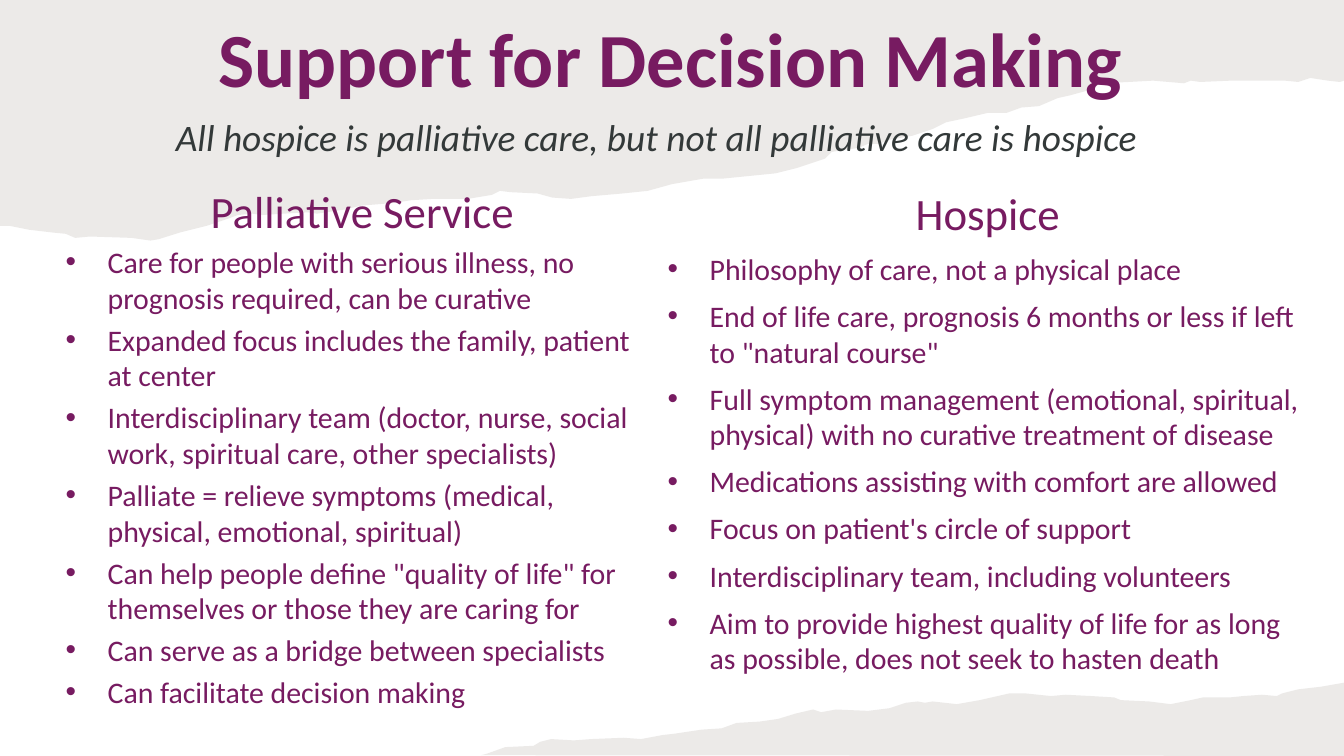
from dataclasses import dataclass

import pptx
import pptx.dml.color
import pptx.enum.text
import pptx.oxml
import pptx.oxml.ns
import pptx.util
from pptx.util import Inches


@dataclass(frozen=True)
class Theme:
    font: str = "Calibri"
    plum: str = "771B61"
    slate: str = "333939"
    paper: str = "82766A"
    paper_alpha: int = 15
    title: int = 41
    heading: int = 24
    subtitle: int = 20
    body: int = 16
    indent: float = 22.5


@dataclass(frozen=True)
class Box:
    left: float
    top: float
    width: float
    height: float


@dataclass(frozen=True)
class Column:
    box: Box
    heading: str
    bullets: tuple[str, ...]
    before: float = 0
    after: float = 0


THEME = Theme()
WIDTH = 10
HEIGHT = WIDTH * 9 / 16

TOP_TEAR = [
    (10, 0.6), (9.97, 0.61), (9.88, 0.6), (9.75, 0.58), (9.66, 0.61), (9.56, 0.6),
    (9.32, 0.6), (9.16, 0.6), (8.93, 0.61), (8.86, 0.6), (8.81, 0.62), (8.58, 0.6),
    (8.4, 0.61), (8.2, 0.62), (8.07, 0.68), (7.96, 0.71), (7.87, 0.73), (7.73, 0.79),
    (7.6, 0.8), (7.49, 0.84), (7.35, 0.84), (7.18, 0.88), (7.04, 0.91), (6.94, 0.96),
    (6.79, 1.01), (6.62, 1.04), (6.54, 1.07), (6.46, 1.07), (6.39, 1.1), (6.19, 1.13),
    (6.14, 1.18), (5.93, 1.25), (5.77, 1.29), (5.57, 1.31), (5.37, 1.33), (5.23, 1.33),
    (5, 1.37), (4.82, 1.42), (4.63, 1.44), (4.4, 1.46), (4.25, 1.48), (4.11, 1.47),
    (4, 1.44), (3.8, 1.43), (3.72, 1.42), (3.66, 1.45), (3.48, 1.48), (3.22, 1.48),
    (3.06, 1.49), (2.93, 1.51), (2.69, 1.53), (2.56, 1.56), (2.36, 1.59), (2.29, 1.58),
    (2.11, 1.59), (1.95, 1.6), (1.88, 1.59), (1.77, 1.6), (1.69, 1.63), (1.54, 1.68),
    (1.34, 1.73), (1.18, 1.78), (1.12, 1.79), (0.98, 1.77), (0.67, 1.76), (0.56, 1.77),
    (0.49, 1.74), (0.39, 1.73), (0.22, 1.71), (0.07, 1.68), (0, 1.68),
]
BOTTOM_TEAR = [
    (3.58, 5.62), (3.62, 5.61), (3.76, 5.56), (3.97, 5.55), (4.02, 5.52), (4.1, 5.5),
    (4.27, 5.51), (4.4, 5.5), (4.64, 5.49), (4.77, 5.5), (4.93, 5.47), (5.02, 5.46),
    (5.22, 5.43), (5.37, 5.42), (5.48, 5.38), (5.65, 5.37), (5.79, 5.35), (5.92, 5.31),
    (6.05, 5.28), (6.11, 5.3), (6.22, 5.28), (6.46, 5.29), (6.62, 5.27), (6.74, 5.23),
    (6.83, 5.22), (6.88, 5.23), (6.94, 5.22), (7.12, 5.24), (7.29, 5.21), (7.51, 5.16),
    (7.63, 5.16), (7.82, 5.18), (7.93, 5.17), (8.12, 5.18), (8.29, 5.19), (8.34, 5.21),
    (8.55, 5.22), (8.71, 5.24), (8.86, 5.21), (8.95, 5.19), (9.15, 5.19), (9.25, 5.18),
    (9.39, 5.17), (9.5, 5.18), (9.54, 5.16), (9.66, 5.13), (9.83, 5.11), (10, 5.08),
]

COLUMNS = (
    Column(
        Box(0.39, 1.32, 4.61, 3.84),
        "Palliative Service",
        (
            "Care for people with serious illness, no prognosis required, can be curative",
            "Expanded focus includes the family, patient at center",
            "Interdisciplinary team (doctor, nurse, social work, spiritual care, other specialists)",
            "Palliate = relieve symptoms (medical, physical, emotional, spiritual)",
            'Can help people define "quality of life" for themselves or those they are caring for',
            "Can serve as a bridge between specialists",
            "Can facilitate decision making",
        ),
        before=3.2,
    ),
    Column(
        Box(4.87, 1.33, 4.96, 3.79),
        "Hospice",
        (
            "Philosophy of care, not a physical place",
            'End of life care, prognosis 6 months or less if left to "natural course"',
            "Full symptom management (emotional, spiritual, physical) with no curative treatment of disease",
            "Medications assisting with comfort are allowed",
            "Focus on patient's circle of support",
            "Interdisciplinary team, including volunteers",
            "Aim to provide highest quality of life for as long as possible, does not seek to hasten death",
        ),
        after=6,
    ),
)


def add_torn_band(s, outline: list[tuple[float, float]]) -> None:
    points = [(Inches(x), Inches(y)) for x, y in outline]
    builder = s.shapes.build_freeform(*points[0])
    builder.add_line_segments(points[1:], close=True)
    sp = builder.convert_to_shape()
    sp.shadow.inherit = False
    sp.line.fill.background()
    sp.fill.solid()
    sp.fill.fore_color.rgb = pptx.dml.color.RGBColor.from_string(THEME.paper)
    color = sp._element.spPr.find(".//" + pptx.oxml.ns.qn("a:srgbClr"))
    alpha = pptx.oxml.parse_xml(f'<a:alpha {pptx.oxml.ns.nsdecls("a")}/>')
    alpha.set("val", str(THEME.paper_alpha * 1000))
    color.append(alpha)


def add_run(p, text: str, size: int, color: str = THEME.plum,
            bold: bool = False, italic: bool = False) -> None:
    r = p.add_run()
    r.text = text
    r.font.name = THEME.font
    r.font.size = pptx.util.Pt(size)
    r.font.bold = bold
    r.font.italic = italic
    r.font.color.rgb = pptx.dml.color.RGBColor.from_string(color)


def add_text_frame(s, box: Box):
    sp = s.shapes.add_textbox(*map(Inches, (box.left, box.top, box.width, box.height)))
    tf = sp.text_frame
    tf.word_wrap = True
    return tf


def make_bullet(p) -> None:
    pPr = p._p.get_or_add_pPr()
    indent = pptx.util.Pt(THEME.indent)
    pPr.set("marL", str(indent))
    pPr.set("indent", str(-indent))
    ns = pptx.oxml.ns.nsdecls("a")
    pPr.append(pptx.oxml.parse_xml(f'<a:buFont {ns} typeface="Arial"/>'))
    pPr.append(pptx.oxml.parse_xml(f'<a:buChar {ns} char="•"/>'))


def add_column(s, column: Column) -> None:
    tf = add_text_frame(s, column.box)
    p = tf.paragraphs[0]
    p.alignment = pptx.enum.text.PP_ALIGN.CENTER
    p.space_after = pptx.util.Pt(column.after)
    add_run(p, column.heading, THEME.heading)
    for bullet in column.bullets:
        p = tf.add_paragraph()
        make_bullet(p)
        p.space_before = pptx.util.Pt(column.before)
        p.space_after = pptx.util.Pt(column.after)
        add_run(p, bullet, THEME.body)


def place_title(s, text: str, box: Box) -> None:
    """Format the title placeholder and raise it above the shapes drawn so far."""
    sp = s.shapes.title
    sp.left, sp.top, sp.width, sp.height = map(
        Inches, (box.left, box.top, box.width, box.height))
    sp._element.getparent().append(sp._element)
    tf = sp.text_frame
    tf.auto_size = pptx.enum.text.MSO_AUTO_SIZE.NONE
    tf.vertical_anchor = pptx.enum.text.MSO_ANCHOR.TOP
    p = tf.paragraphs[0]
    p.alignment = pptx.enum.text.PP_ALIGN.CENTER
    p.line_spacing = 0.9
    add_run(p, text, THEME.title, bold=True)


def main() -> None:
    prs = pptx.Presentation()
    prs.slide_width, prs.slide_height = Inches(WIDTH), Inches(HEIGHT)
    s = prs.slides.add_slide(prs.slide_layouts[5])
    add_torn_band(s, [(0, 0), (WIDTH, 0), *TOP_TEAR])
    place_title(s, "Support for Decision Making", Box(1.19, 0.11, 7.61, 0.78))
    add_torn_band(s, [*BOTTOM_TEAR, (WIDTH, HEIGHT)])
    for column in COLUMNS:
        add_column(s, column)
    p = add_text_frame(s, Box(1.21, 0.8, 7.59, 0.44)).paragraphs[0]
    add_run(p, "All hospice is palliative care, but not all palliative care is hospice",
            THEME.subtitle, THEME.slate, italic=True)
    prs.save("out.pptx")


if __name__ == "__main__":
    main()
